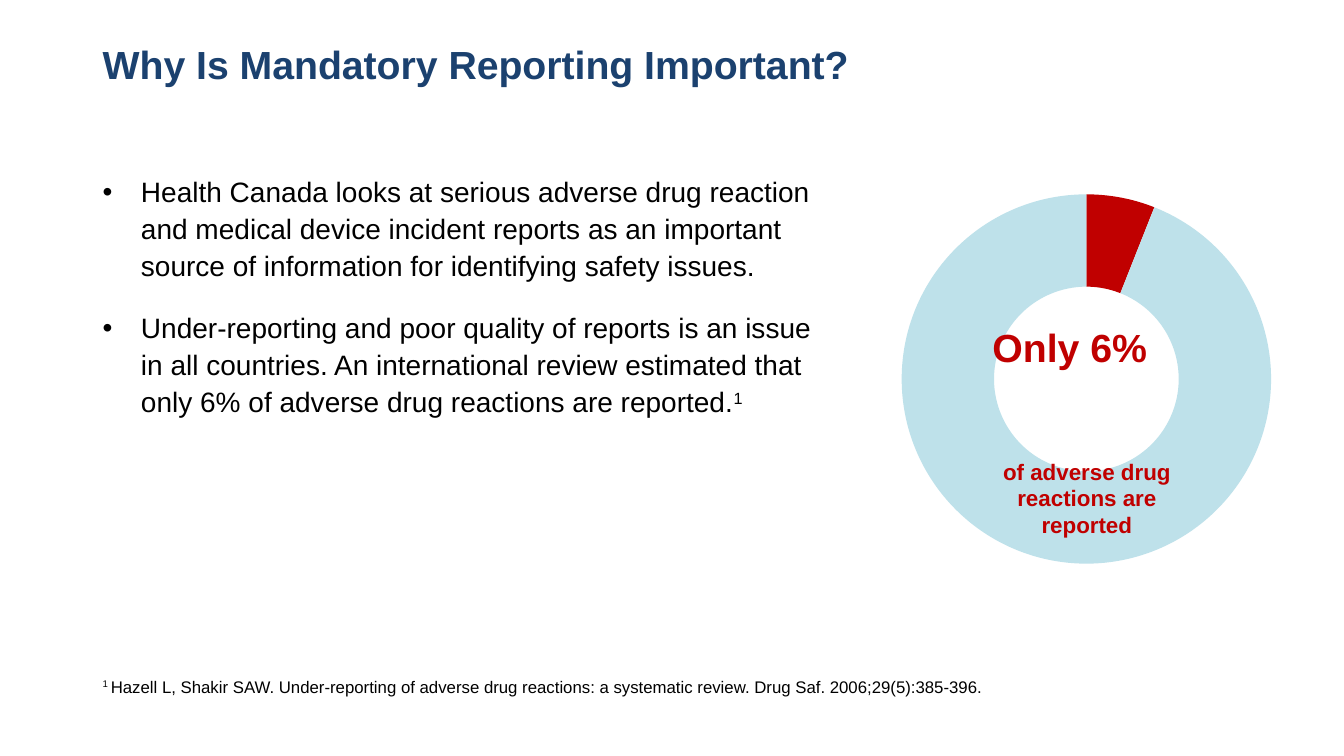
from pptx import Presentation
from pptx.chart.data import CategoryChartData
from pptx.dml.color import RGBColor
from pptx.enum import chart as kinds, text as te
from pptx.oxml import parse_xml
from pptx.oxml.ns import nsdecls
from pptx.util import Inches, Pt

NAVY = RGBColor(0x1B, 0x41, 0x6F)
BLACK = RGBColor(0, 0, 0)
RED = RGBColor(0xC0, 0, 0)
PALE = RGBColor(0xBE, 0xE1, 0xEA)

deck = Presentation()
deck.slide_width, deck.slide_height = Inches(13.33), Inches(7.5)
slide = deck.slides.add_slide(deck.slide_layouts[6])


def write(text, box, size, color=BLACK, bold=False, center=False,
          middle=False, lines=1.0, bullet=False):
    """Add a text box; parts between ^ marks are superscript."""
    frame = slide.shapes.add_textbox(*map(Inches, box)).text_frame
    frame.word_wrap = True
    frame.vertical_anchor = te.MSO_ANCHOR.MIDDLE if middle else te.MSO_ANCHOR.TOP
    for row, line in enumerate(text.split("\n")):
        para = frame.add_paragraph() if row else frame.paragraphs[0]
        para.line_spacing = lines
        para.alignment = te.PP_ALIGN.CENTER if center else te.PP_ALIGN.LEFT
        if bullet:
            para.space_before, para.space_after = Pt(6), Pt(12)
            props = para._p.get_or_add_pPr()
            props.set("marL", str(Inches(0.38)))
            props.set("indent", str(-Inches(0.38)))
            props.append(parse_xml(f'<a:buFont {nsdecls("a")} typeface="Arial"/>'))
            props.append(parse_xml(f'<a:buChar {nsdecls("a")} char="•"/>'))
        for spot, part in enumerate(line.split("^")):
            if not part:
                continue
            run = para.add_run()
            run.text = part
            font = run.font
            font.name, font.size, font.bold = "Arial", Pt(size), bold
            font.color.rgb = color
            if spot % 2:
                run._r.get_or_add_rPr().set("baseline", "30000")


# Title and main points
write("Why Is Mandatory Reporting Important?", (0.92, 0.4, 11.5, 1.45), 28,
      color=NAVY, bold=True, lines=0.9)
write("Health Canada looks at serious adverse drug reaction and medical device "
      "incident reports as an important source of information for identifying "
      "safety issues.\n"
      "Under-reporting and poor quality of reports is an issue in all countries. "
      "An international review estimated that only 6% of adverse drug reactions "
      "are reported.^1^", (0.92, 1.65, 7.44, 4.6), 20, lines=1.1, bullet=True)

# Doughnut chart
data = CategoryChartData()
data.categories = ["1", "2"]
data.add_series("Series 1", (6, 94))
chart = slide.shapes.add_chart(
    kinds.XL_CHART_TYPE.DOUGHNUT, Inches(8.22), Inches(1.79), Inches(5.11),
    Inches(3.94), data).chart
chart.has_legend = chart.has_title = False
chart.font.name, chart.font.size = "Calibri", Pt(18)
chart.font.color.rgb = BLACK
plot = chart.plots[0]
plot.vary_by_categories = True
for spot, color in enumerate((RED, PALE)):
    part = plot.series[0].points[spot].format
    part.fill.solid()
    part.fill.fore_color.rgb = color
    part.line.fill.background()

# Chart message
write("Only 6%", (9.56, 3.14, 2.1, 0.6), 28, color=RED, bold=True,
      center=True, middle=True)
write("of adverse drug reactions are reported", (9.73, 4.49, 2.1, 0.9), 16,
      color=RED, bold=True, center=True, middle=True)

# Reference
write("^1 ^Hazell L, Shakir SAW. Under-reporting of adverse drug reactions: "
      "a systematic review. Drug Saf. 2006;29(5):385-396.",
      (0.92, 6.66, 10.56, 0.3), 12)

deck.save("out.pptx")
